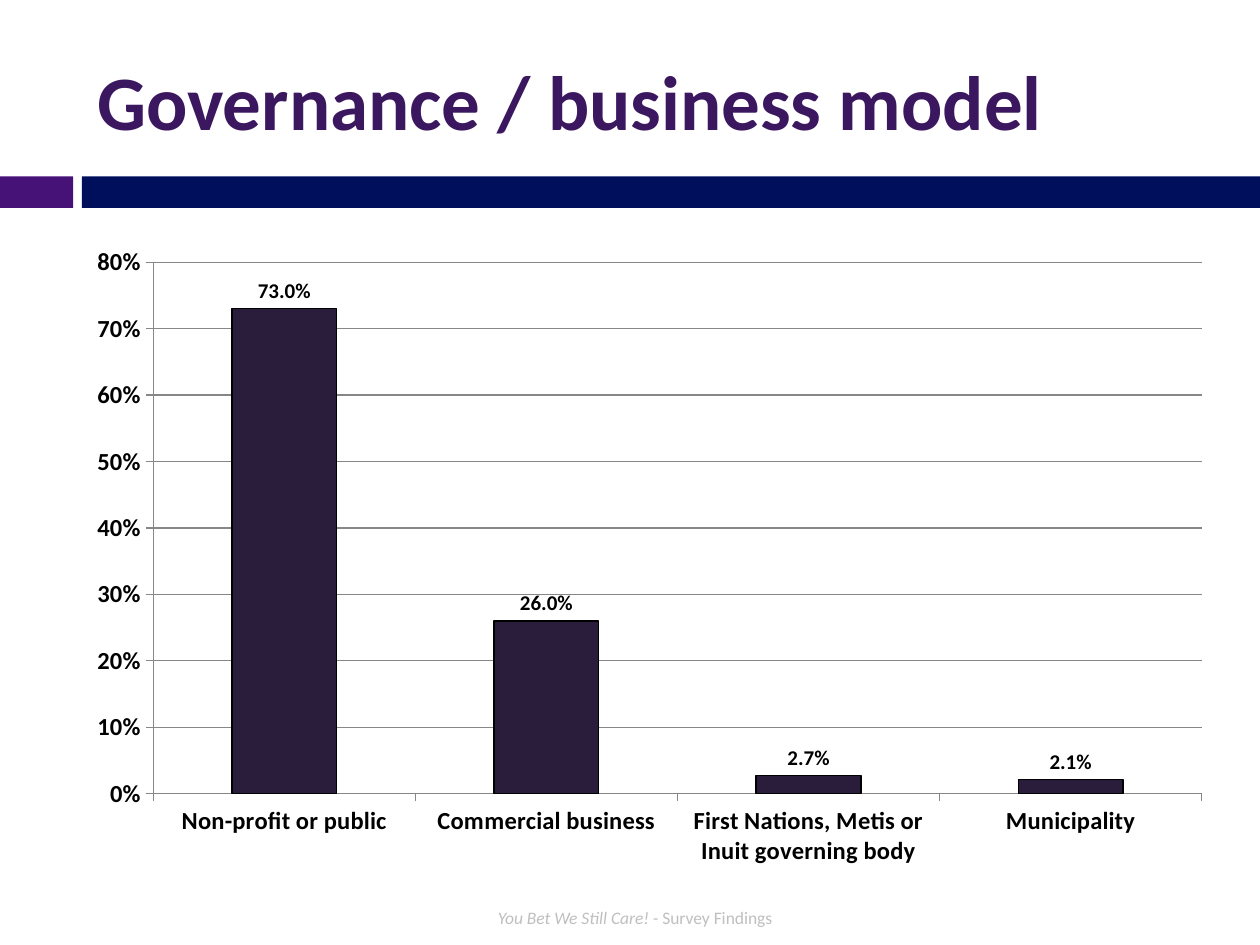
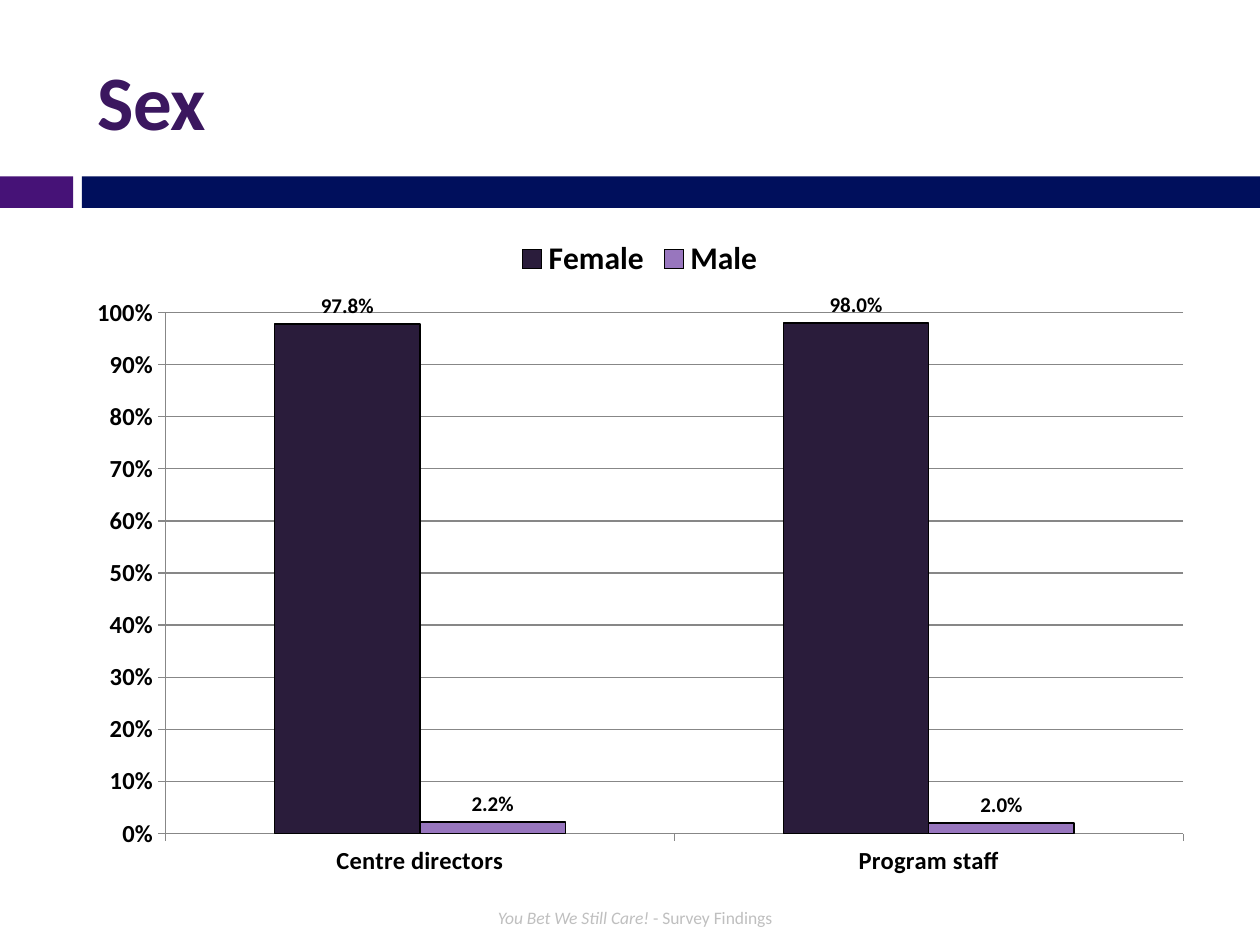
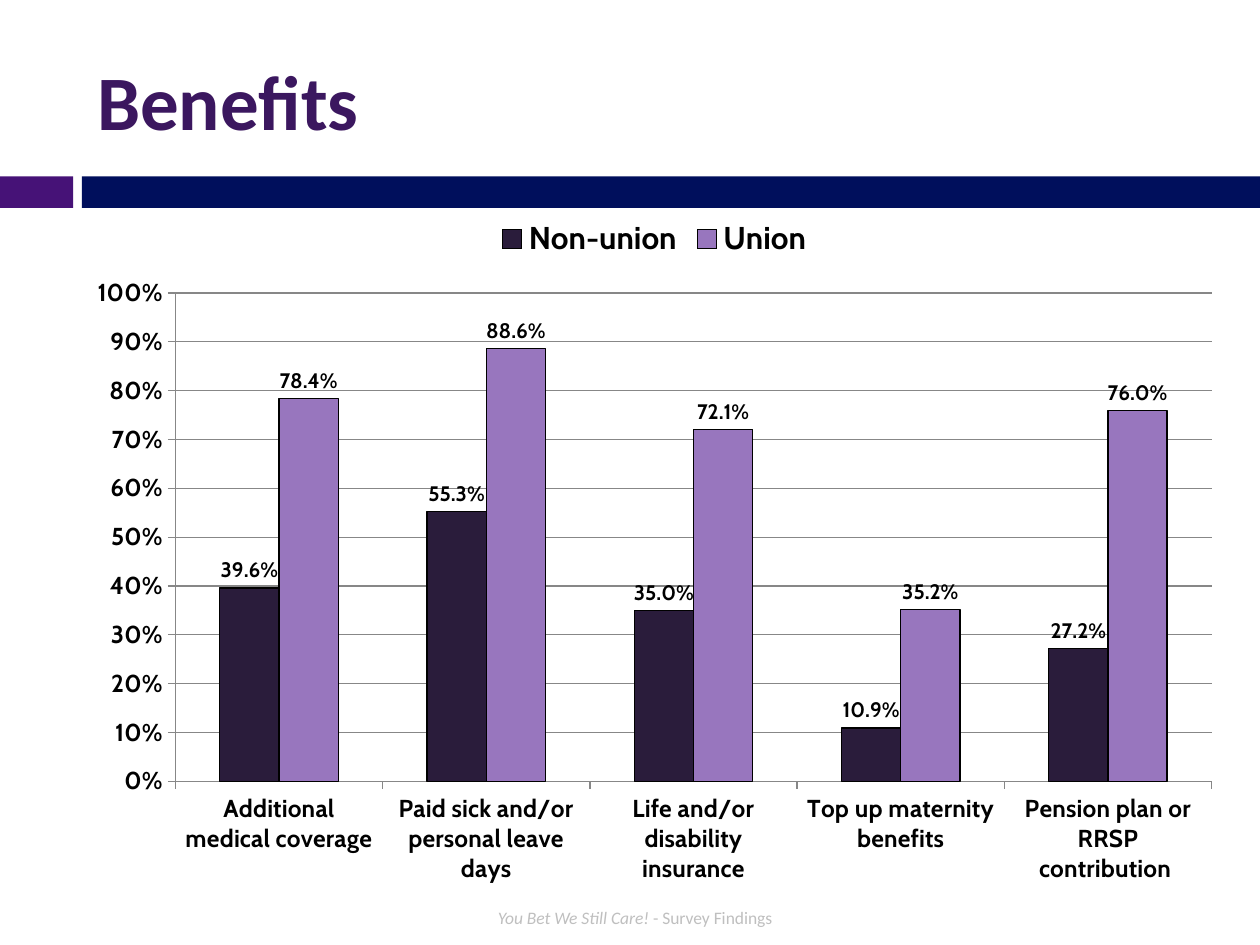
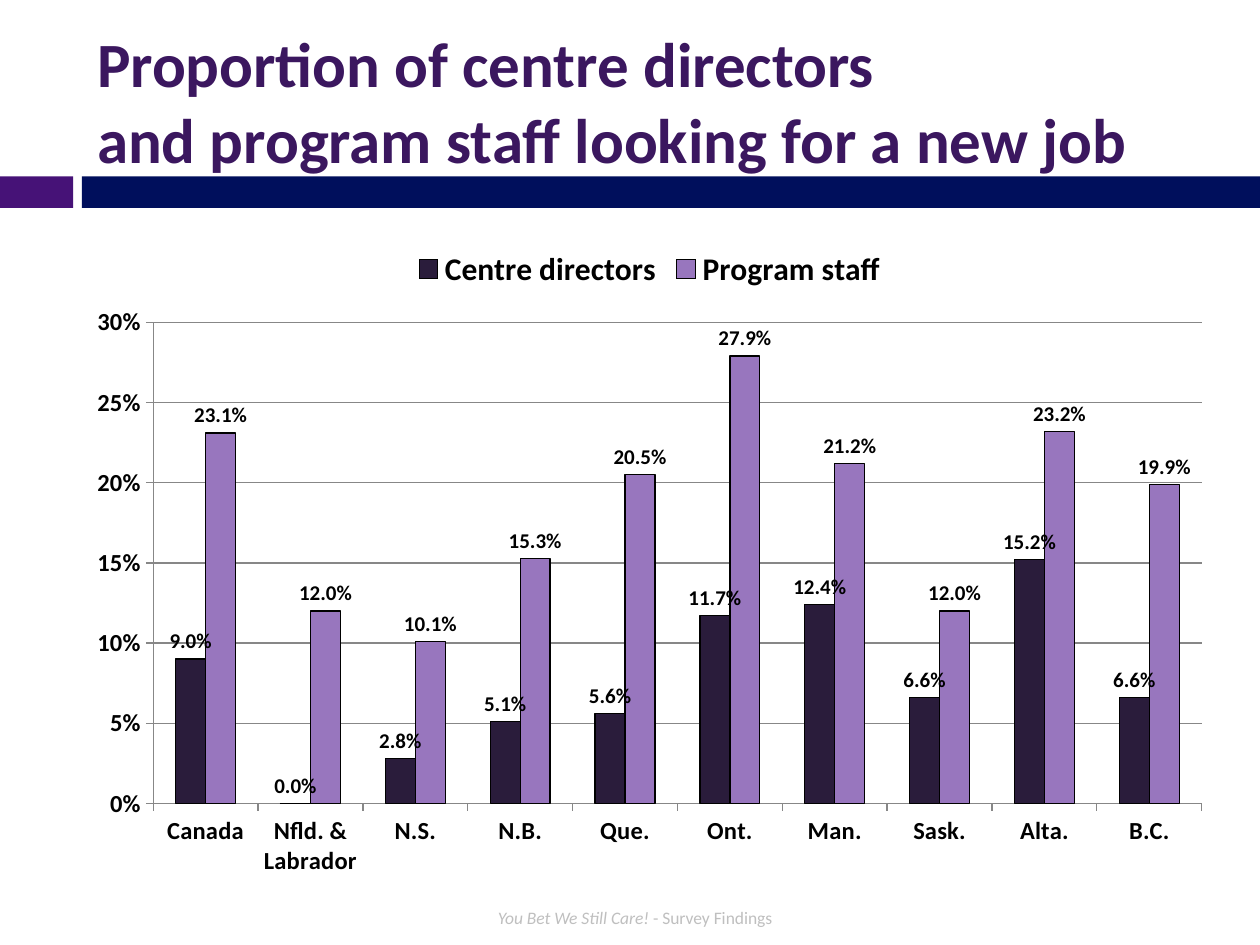
from pptx import Presentation
from pptx.chart.data import CategoryChartData
from pptx.dml.color import RGBColor
from pptx.enum.chart import XL_CHART_TYPE as ChartType
from pptx.enum.chart import XL_LABEL_POSITION as LabelPosition
from pptx.enum.chart import XL_LEGEND_POSITION as LegendPosition
from pptx.enum.chart import XL_TICK_MARK as TickMark
from pptx.enum.shapes import MSO_SHAPE as Preset
from pptx.enum.shapes import PP_PLACEHOLDER as Placeholder
from pptx.enum.text import MSO_ANCHOR as Anchor
from pptx.enum.text import MSO_AUTO_SIZE as AutoSize
from pptx.enum.text import PP_ALIGN as Align
from pptx.util import Inches, Pt

COLORS = {
    "title": "3B175F",
    "accent band": "461277",
    "main band": "000F5C",
    "footer": "BFBFBF",
    "text": "000000",
    "outline": "000000",
    "grid": "878787",
    "dark bar": "2A1C3B",
    "light bar": "9876BE",
}
BAR_COLORS = ("dark bar", "light bar")
FONT = "Calibri"
TITLE_ONLY = 5
UNUSED_PLACEHOLDERS = (Placeholder.DATE, Placeholder.FOOTER,
                       Placeholder.SLIDE_NUMBER)

# Boxes are left, top, width, height in inches
BANDS = {
    "accent band": (0, 1.4, 0.58, 0.25),
    "main band": (0.65, 1.4, 9.35, 0.25),
}
FOOTER_BOX = (3.5, 7.14, 3.08, 0.29)
TITLE_BOX = (0.67, 0.37, 8.92, 0.84)
TALL_TITLE_BOX = (0.67, 0.14, 8.92, 1.31)

PAGES = [
    {
        "title": ["Governance / business model"],
        "chart box": (0.59, 1.86, 9.13, 5.12),
        "categories": ["Non-profit or public", "Commercial business",
                       "First Nations, Metis or Inuit governing body",
                       "Municipality"],
        "series": {"Series 1": (0.73, 0.26, 0.027, 0.021)},
    },
    {
        "title": ["Sex"],
        "chart box": (0.59, 1.78, 8.98, 5.28),
        "categories": ["Centre directors", "Program staff"],
        "series": {"Female": (0.978, 0.98), "Male": (0.022, 0.02)},
        "maximum": 1,
    },
    {
        "title": ["Benefits"],
        "chart box": (0.59, 1.62, 9.21, 5.51),
        "chart font": "Cabin",
        "categories": ["Additional medical coverage",
                       "Paid sick and/or personal leave days",
                       "Life and/or disability insurance",
                       "Top up maternity benefits",
                       "Pension plan or RRSP contribution "],
        "series": {
            "Non-union": (0.396, 0.553, 0.35, 0.109, 0.272),
            "Union": (0.784, 0.886, 0.721, 0.352, 0.76),
        },
    },
    {
        "title": ["Proportion of centre directors",
                  "and program staff looking for a new job"],
        "title box": TALL_TITLE_BOX,
        "title size": 36,
        "chart box": (0.59, 1.86, 9.13, 5.2),
        "categories": ["Canada", "Nfld. & Labrador", "N.S.", "N.B.", "Que.",
                       "Ont.", "Man.", "Sask.", "Alta.", "B.C."],
        "series": {
            "Centre directors": (0.09, 0, 0.028, 0.051, 0.056,
                                 0.117, 0.124, 0.066, 0.152, 0.066),
            "Program staff": (0.231, 0.12, 0.101, 0.153, 0.205,
                              0.279, 0.212, 0.12, 0.232, 0.199),
        },
    },
]


def color(name):
    return RGBColor.from_string(COLORS[name])


def inches(box):
    return [Inches(length) for length in box]


def style_font(font, size, color_name, name=FONT, bold=False, italic=False):
    font.name = name
    font.size = Pt(size)
    font.bold = bold
    font.italic = italic
    font.color.rgb = color(color_name)


def add_span(para, text, *style, **options):
    span = para.add_run()
    span.text = text
    style_font(span.font, *style, **options)


def clear_unused_placeholders(layout):
    """Drop the date, footer and number boxes, which no page uses."""
    for holder in list(layout.placeholders):
        if holder.placeholder_format.type in UNUSED_PLACEHOLDERS:
            layout.shapes.element.remove(holder.element)


def move_bands_to_layout(page):
    """Draw the two bands and hand them to the layout all pages share."""
    tree = page.slide_layout.shapes.element
    for order, (name, box) in enumerate(BANDS.items()):
        band = page.shapes.add_shape(Preset.RECTANGLE, *inches(box))
        band.shadow.inherit = False
        band.fill.solid()
        band.fill.fore_color.rgb = color(name)
        band.line.fill.background()
        band.element.nvSpPr.cNvPr.set("id", str(100 + order))
        tree.insert(2 + order, band.element)


def fill_title(page, lines, box, size):
    title = page.shapes.title
    title.left, title.top, title.width, title.height = inches(box)
    frame = title.text_frame
    frame.word_wrap = True
    frame.auto_size = AutoSize.SHAPE_TO_FIT_TEXT
    frame.vertical_anchor = Anchor.MIDDLE
    para = frame.paragraphs[0]
    para.alignment = Align.LEFT
    for number, line in enumerate(lines):
        if number:
            para.add_line_break()
        add_span(para, line, size, "title", bold=True)


def add_footer(page, box):
    frame = page.shapes.add_textbox(*inches(box)).text_frame
    frame.word_wrap = True
    frame.vertical_anchor = Anchor.MIDDLE
    para = frame.paragraphs[0]
    para.alignment = Align.CENTER
    add_span(para, "You Bet We Still Care! ", 10, "footer", italic=True)
    add_span(para, "- Survey Findings", 10, "footer")


def style_axes(chart, maximum):
    for axis in (chart.category_axis, chart.value_axis):
        axis.major_tick_mark = TickMark.OUTSIDE
        axis.minor_tick_mark = TickMark.NONE
        axis.format.line.color.rgb = color("grid")
    values = chart.value_axis
    if maximum:
        values.maximum_scale = maximum
    values.has_major_gridlines = True
    values.major_gridlines.format.line.color.rgb = color("grid")
    values.tick_labels.number_format = "0%"
    values.tick_labels.number_format_is_linked = False


def style_bars(series, color_name, font_name):
    series.invert_if_negative = False
    series.format.fill.solid()
    series.format.fill.fore_color.rgb = color(color_name)
    series.format.line.color.rgb = color("outline")
    series.format.line.width = Pt(0.75)
    labels = series.data_labels
    labels.show_value = True
    labels.position = LabelPosition.OUTSIDE_END
    labels.number_format = "0.0%"
    labels.number_format_is_linked = False
    style_font(labels.font, 12, "text", name=font_name, bold=True)


def add_bar_chart(page, box, categories, series, font_name, maximum):
    data = CategoryChartData(number_format="0.0%")
    data.categories = categories
    for name, values in series.items():
        data.add_series(name, values)
    chart = page.shapes.add_chart(
        ChartType.COLUMN_CLUSTERED, *inches(box), data).chart
    chart.has_title = False
    style_font(chart.font, 14, "text", name=font_name, bold=True)
    style_axes(chart, maximum)

    plot = chart.plots[0]
    plot.gap_width = 150
    plot.vary_by_categories = False
    for bars, color_name in zip(plot.series, BAR_COLORS):
        style_bars(bars, color_name, font_name)

    # A single series needs no legend
    chart.has_legend = len(series) > 1
    if chart.has_legend:
        chart.legend.position = LegendPosition.TOP
        chart.legend.include_in_layout = False
        style_font(chart.legend.font, 18, "text", name=font_name, bold=True)


def add_chart_page(deck, content):
    page = deck.slides.add_slide(deck.slide_layouts[TITLE_ONLY])
    add_bar_chart(page, content["chart box"], content["categories"],
                  content["series"], content.get("chart font", FONT),
                  content.get("maximum"))
    add_footer(page, FOOTER_BOX)
    fill_title(page, content["title"], content.get("title box", TITLE_BOX),
               content.get("title size", 44))
    return page


def main():
    deck = Presentation()
    deck.slide_width, deck.slide_height = Inches(10), Inches(7.5)
    clear_unused_placeholders(deck.slide_layouts[TITLE_ONLY])
    pages = [add_chart_page(deck, content) for content in PAGES]
    move_bands_to_layout(pages[0])
    deck.save("out.pptx")


if __name__ == "__main__":
    main()
